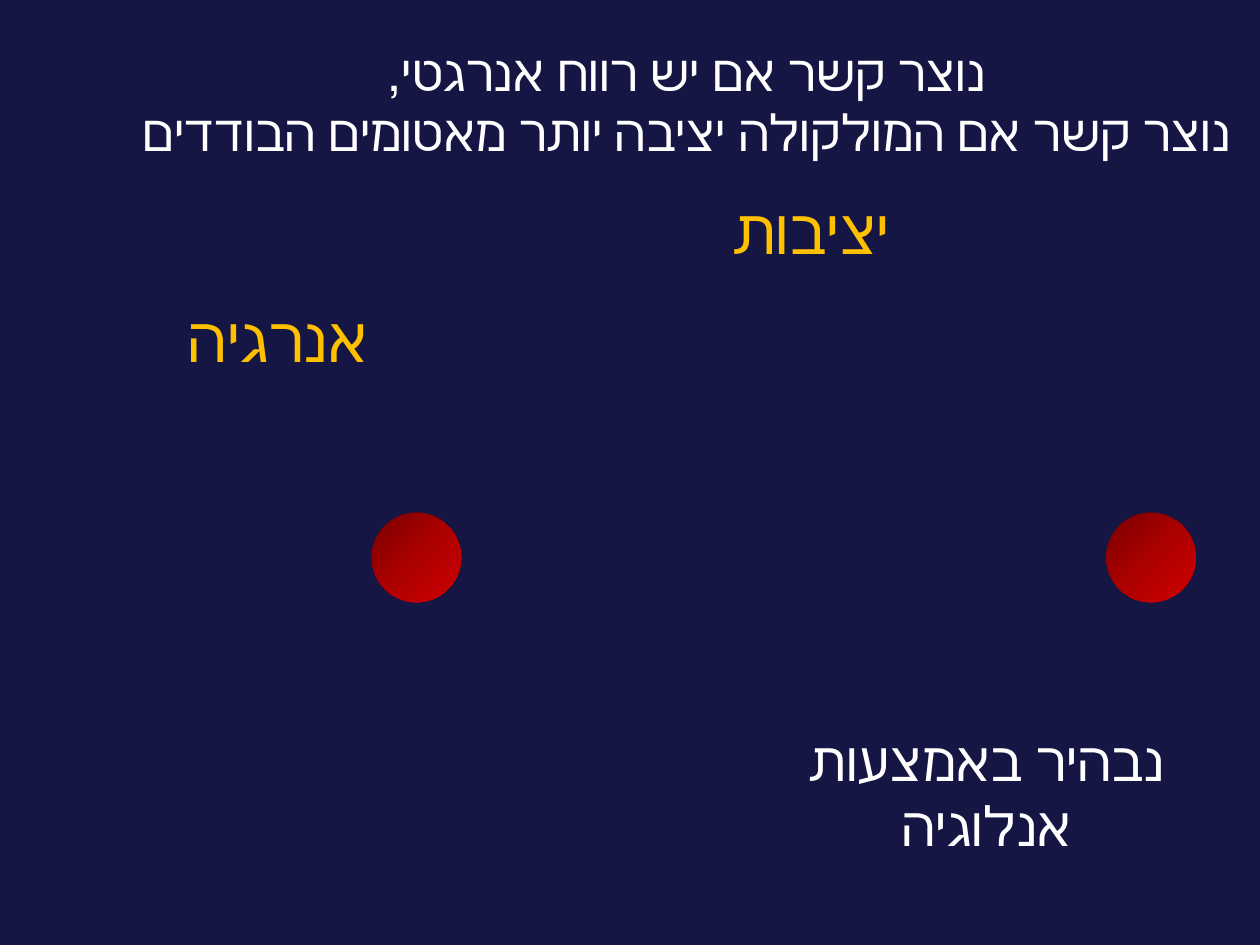
from copy import deepcopy

from pptx import Presentation as Deck
from pptx.dml.color import RGBColor as Color
from pptx.enum.shapes import MSO_SHAPE as Form
from pptx.enum.text import MSO_ANCHOR as Anchor, PP_ALIGN as Align
from pptx.oxml.ns import qn
from pptx.util import Pt

NAVY = Color(0x16, 0x16, 0x45)
WHITE = Color(0xFF, 0xFF, 0xFF)
GOLD = Color(0xFF, 0xC0, 0x00)
REDS = (Color(0x77, 0, 0), Color(0xAD, 0, 0), Color(0xCE, 0, 0))
FACE = "Arial"
BALL = 51.12


def style(item, form):
    for name, value in form.items():
        setattr(item, name, value)


def label(slide, text, area, size, color, anchor=Anchor.TOP):
    frame = slide.shapes.add_textbox(*map(Pt, area)).text_frame
    style(frame, {"word_wrap": True, "vertical_anchor": anchor,
                  "margin_left": Pt(0), "margin_right": Pt(0)})
    para = frame.paragraphs[0]
    para.text = text
    para.alignment = Align.CENTER
    para._p.get_or_add_pPr().set("rtl", "1")
    for run in para.runs:
        style(run.font, {"name": FACE, "size": Pt(size)})
        run.font.color.rgb = color


def atom(slide, left, top):
    ball = slide.shapes.add_shape(Form.OVAL, *map(Pt, (left, top, BALL, BALL)))
    ball.shadow.inherit = False
    ball.line.fill.background()
    fill = ball.fill
    fill.gradient()
    fill.gradient_angle = 315
    stops = ball._element.spPr.find(".//" + qn("a:gsLst"))
    stops.insert(1, deepcopy(stops[0]))
    for i, (stop, color) in enumerate(zip(fill.gradient_stops, REDS)):
        stop.color.rgb = color
        stop.position = i / (len(REDS) - 1)


def main():
    deck = Deck()
    style(deck, {"slide_width": Pt(720), "slide_height": Pt(540)})
    slide = deck.slides.add_slide(deck.slide_layouts[6])
    back = slide.background.fill
    back.solid()
    back.fore_color.rgb = NAVY

    label(slide, "נוצר קשר אם יש רווח אנרגטי,\vנוצר קשר אם המולקולה יציבה יותר מאטומים הבודדים",
          (64.8, 0, 655.2, 115.92), 28.8, WHITE, Anchor.MIDDLE)
    label(slide, "נבהיר באמצעות אנלוגיה",
          (444.96, 394.56, 237.6, 115.92), 31.2, WHITE, Anchor.MIDDLE)
    label(slide, "אנרגיה", (19.44, 167.76, 278.64, 51.12), 36, GOLD)
    label(slide, "יציבות", (206.64, 105.84, 513.36, 51.12), 36, GOLD)
    for left in (632.16, 212.4):
        atom(slide, left, 293.04)
    deck.save("out.pptx")


if __name__ == "__main__":
    main()
